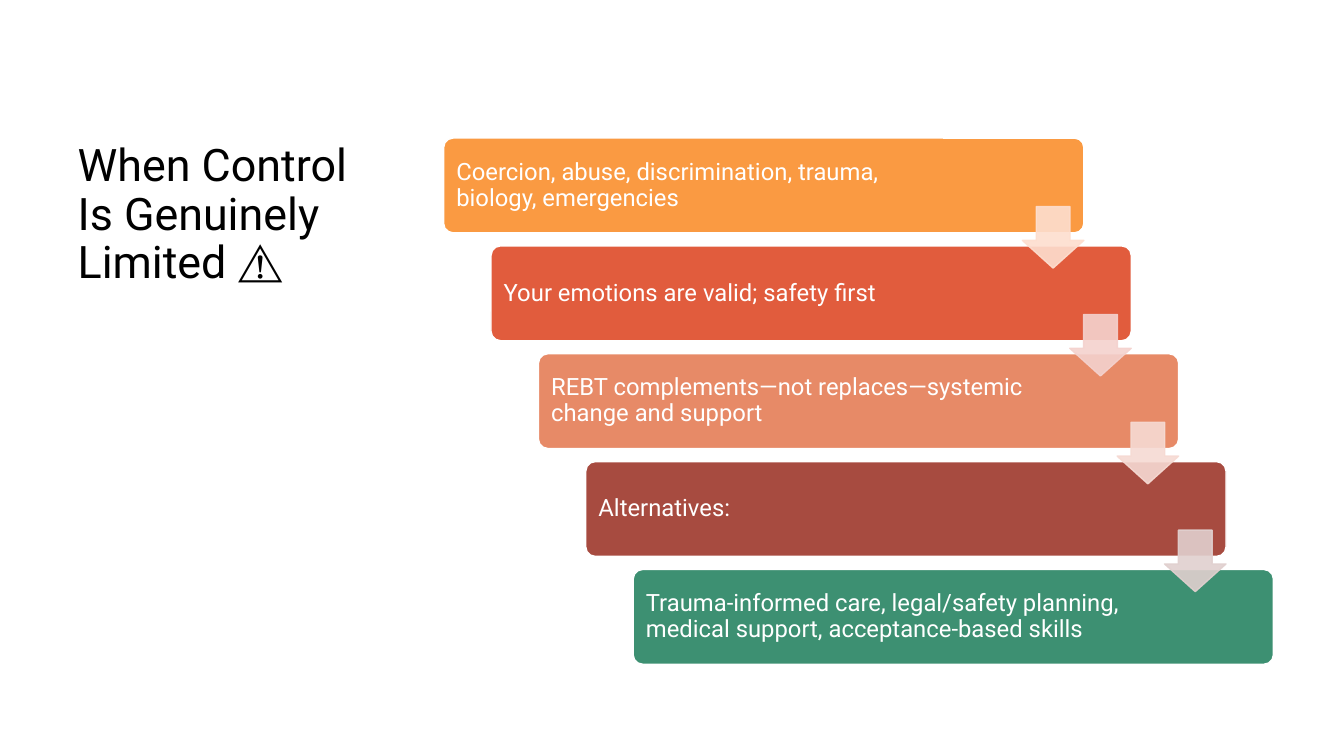
from pptx import Presentation
from pptx.dml.color import RGBColor as RGB
from pptx.enum.shapes import MSO_SHAPE as Shape
from pptx.enum.text import MSO_ANCHOR as Anchor, PP_ALIGN as Align
from pptx.oxml.ns import qn
from pptx.util import Inches, Pt
from lxml.etree import SubElement

FONT = "Roboto"
BLACK = RGB(0x00, 0x00, 0x00)
WHITE = RGB(0xFF, 0xFF, 0xFF)
TITLE = "When Control Is Genuinely Limited ⚠️"
STEPS = [
    ("Coercion, abuse, discrimination, trauma, biology, emergencies",
     RGB(0xFA, 0x9A, 0x42)),
    ("Your emotions are valid; safety first", RGB(0xE1, 0x5C, 0x3D)),
    ("REBT complements—not replaces—systemic change and support",
     RGB(0xE7, 0x8A, 0x67)),
    ("Alternatives:", RGB(0xA7, 0x4B, 0x40)),
    ("Trauma-informed care, legal/safety planning, medical support, "
     "acceptance-based skills", RGB(0x3D, 0x90, 0x72)),
]
ARROWS = [RGB(0xFD, 0xDE, 0xCF), RGB(0xF4, 0xD2, 0xCE),
          RGB(0xF6, 0xDA, 0xD3), RGB(0xE1, 0xD0, 0xCF)]
LEFT, TOP = 4.4, 1.37
RIGHT, DOWN = 0.47, 1.07


def write(frame, text, size, color):
    """Fill a text frame with one left-aligned paragraph."""
    frame.word_wrap = True
    frame.text = text
    para = frame.paragraphs[0]
    para.alignment = Align.LEFT
    para.line_spacing = 0.9
    font = para.font
    font.name, font.size = FONT, Pt(size)
    font.color.rgb = color


def add_title(slide):
    """Place and format the title."""
    title = slide.shapes.title
    title.left, title.top = Inches(0.67), Inches(TOP)
    title.width, title.height = Inches(3.18), Inches(5.22)
    write(title.text_frame, TITLE, 32, BLACK)
    title.text_frame.vertical_anchor = Anchor.TOP


def add_shape(slide, kind, box, fill, line):
    """Add a flat preset shape with a one-point outline."""
    shape = slide.shapes.add_shape(kind, *map(Inches, box))
    shape.shadow.inherit = False
    shape.fill.solid()
    shape.fill.fore_color.rgb = fill
    shape.line.color.rgb = line
    shape.line.width = Pt(1)
    return shape


def add_step(slide, row, text, color):
    """Add one step of the staircase with its text."""
    box = (LEFT + row * RIGHT, TOP + row * DOWN, 6.35, 0.94)
    step = add_shape(slide, Shape.ROUNDED_RECTANGLE, box, color, WHITE)
    step.adjustments[0] = 0.1
    frame = step.text_frame
    frame.margin_left, frame.margin_right = Inches(0.1), Inches(1.18)
    frame.vertical_anchor = Anchor.MIDDLE
    write(frame, text, 17, WHITE)


def add_arrow(slide, row, color):
    """Add the translucent arrow that leads to the next step."""
    box = (LEFT + 5.74 + row * RIGHT, TOP + 0.68 + row * DOWN, 0.61, 0.61)
    arrow = add_shape(slide, Shape.DOWN_ARROW, box, color, color)
    arrow.adjustments[0], arrow.adjustments[1] = 0.55, 0.45
    for tint in arrow.element.spPr.iter(qn("a:srgbClr")):
        SubElement(tint, qn("a:alpha"), val="90000")


def main():
    """Build the slide and save it."""
    deck = Presentation()
    deck.slide_width, deck.slide_height = Inches(13.33), Inches(7.5)
    slide = deck.slides.add_slide(deck.slide_layouts[5])
    add_title(slide)
    for row, (text, color) in enumerate(STEPS):
        add_step(slide, row, text, color)
    for row, color in enumerate(ARROWS):
        add_arrow(slide, row, color)
    deck.save("out.pptx")


if __name__ == "__main__":
    main()
